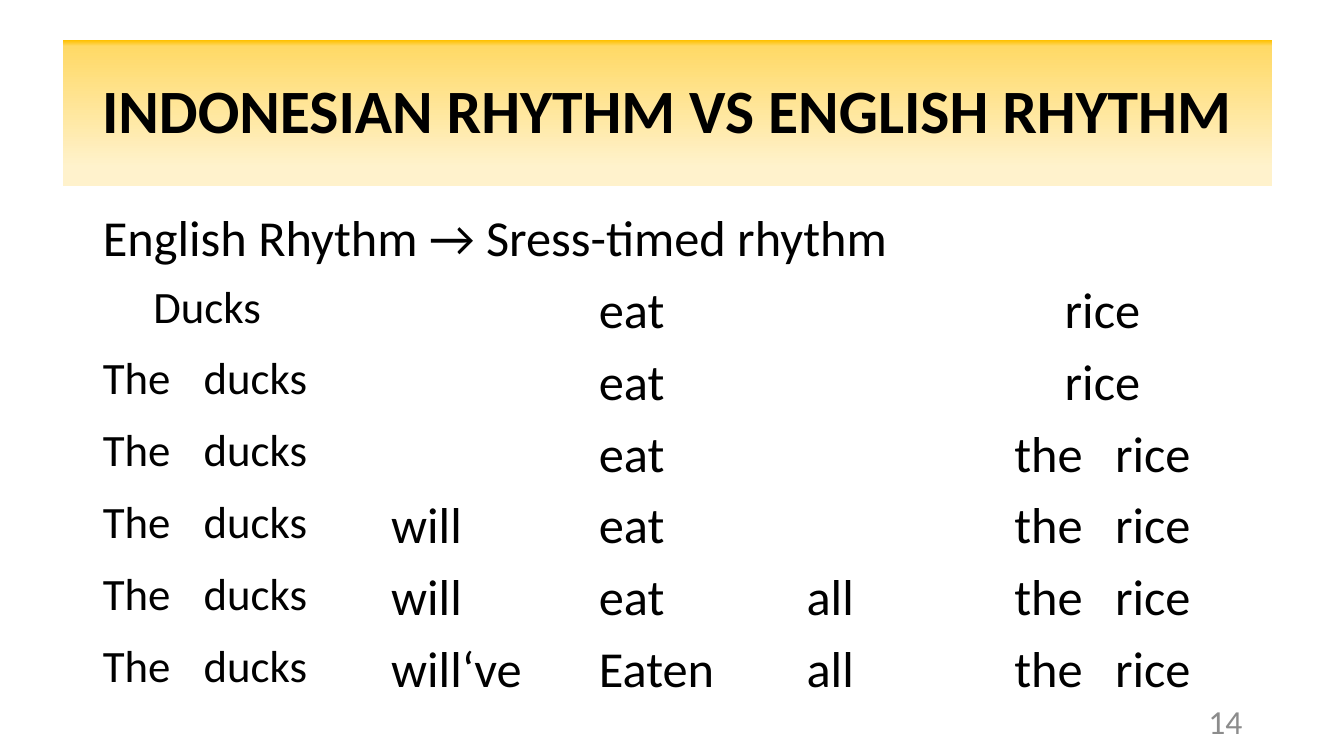
import copy
from dataclasses import dataclass

import pptx
import pptx.util
import pptx.dml.color
import pptx.enum.text
import pptx.oxml.ns

Inches = pptx.util.Inches
Align = pptx.enum.text.PP_ALIGN
Anchor = pptx.enum.text.MSO_ANCHOR


@dataclass(frozen=True)
class Theme:
    font: str = "Calibri"
    ink: str = "000000"
    muted: str = "8C8C8C"
    band: tuple = ((0, "FFC000"), (0.04, "FFD966"), (0.87, "FFF2CC"))
    title: int = 44
    text: int = 36
    lead: int = 32
    number: int = 24


THEME = Theme()
WIDTHS = (2.86, 2.06, 2.06, 2.06, 2.46)
HEADING = "English Rhythm → Sress-timed rhythm"
ROWS = (
    ("\tDucks", "", "eat", "", "\trice"),
    ("The \tducks", "", "eat", "", "\trice"),
    ("The \tducks", "", "eat", "", "the \trice"),
    ("The \tducks", "will", "eat", "", "the \trice"),
    ("The \tducks", "will", "eat", "all", "the \trice"),
    ("The \tducks", "will‘ve", "Eaten", "all", "the \trice"),
)


def color(code):
    return pptx.dml.color.RGBColor.from_string(code)


def write(frame, text, size, ink=THEME.ink, bold=False, align=Align.LEFT):
    frame.text = text
    line = frame.paragraphs[0]
    line.alignment = align
    for run in line.runs:
        run.font.name = THEME.font
        run.font.size = pptx.util.Pt(size)
        run.font.bold = bold
        run.font.color.rgb = color(ink)
    return line


def shade(shape, stops):
    fill = shape.fill
    fill.gradient()
    fill.gradient_angle = 270
    items = shape.element.spPr.find(".//" + pptx.oxml.ns.qn("a:gsLst"))
    while len(items) < len(stops):
        items.append(copy.deepcopy(items[-1]))
    for stop, (place, code) in zip(fill.gradient_stops, stops):
        stop.position = place
        stop.color.rgb = color(code)


def add_title(slide, text):
    title = slide.shapes.title
    title.left, title.top = Inches(0.62), Inches(0.4)
    title.width, title.height = Inches(12), Inches(1.45)
    shade(title, THEME.band)
    frame = title.text_frame
    frame.auto_size = pptx.enum.text.MSO_AUTO_SIZE.NONE
    frame.vertical_anchor = Anchor.MIDDLE
    line = write(frame, text, THEME.title, bold=True, align=Align.CENTER)
    line.line_spacing = 0.9


def add_grid(slide, heading, rows):
    count = len(rows) + 1
    grid = slide.shapes.add_table(
        count, len(WIDTHS), Inches(0.92), Inches(2.02),
        Inches(sum(WIDTHS)), Inches(0.7 * count)).table
    grid.first_row = False
    grid.horz_banding = False
    for column, width in zip(grid.columns, WIDTHS):
        column.width = Inches(width)
    for cell in grid.iter_cells():
        cell.fill.background()
    grid.cell(0, 0).merge(grid.cell(0, len(WIDTHS) - 1))
    write(grid.cell(0, 0).text_frame, heading, THEME.text)
    for r, words in enumerate(rows, 1):
        for c, word in enumerate(words):
            if word:
                size = THEME.text if c else THEME.lead
                write(grid.cell(r, c).text_frame, word, size)


def add_number(slide, text):
    box = slide.shapes.add_textbox(
        Inches(9.42), Inches(6.95), Inches(3), Inches(0.4))
    frame = box.text_frame
    frame.word_wrap = True
    frame.vertical_anchor = Anchor.MIDDLE
    write(frame, text, THEME.number, THEME.muted, align=Align.RIGHT)


def main():
    deck = pptx.Presentation()
    deck.slide_width = Inches(13.33)
    deck.slide_height = Inches(7.5)
    slide = deck.slides.add_slide(deck.slide_layouts[5])
    add_title(slide, "INDONESIAN RHYTHM VS ENGLISH RHYTHM")
    add_grid(slide, HEADING, ROWS)
    add_number(slide, "14")
    deck.save("out.pptx")


if __name__ == "__main__":
    main()
